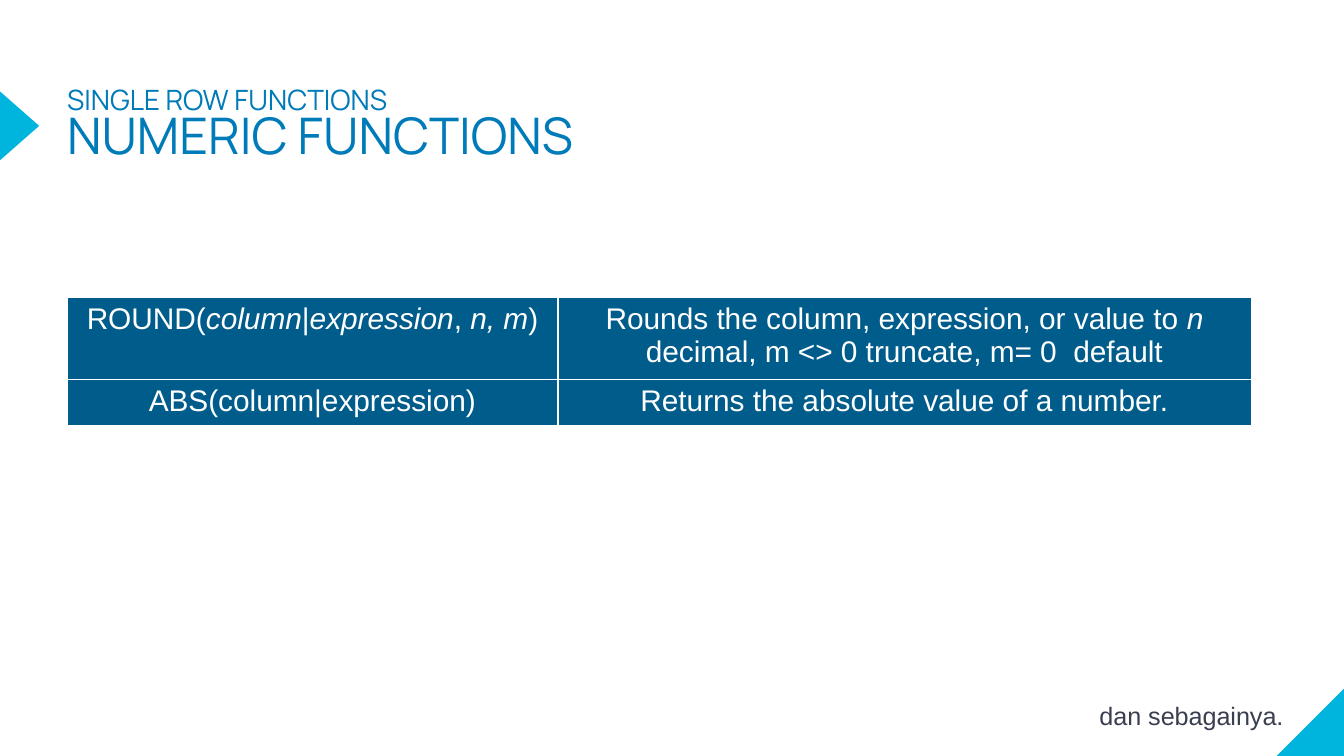
from lxml import etree
from pptx import Presentation
from pptx.dml.color import RGBColor
from pptx.enum.shapes import MSO_SHAPE
from pptx.enum.text import PP_ALIGN
from pptx.oxml.ns import qn
from pptx.util import Cm, Pt

TRIANGLE = MSO_SHAPE.ISOSCELES_TRIANGLE
RIGHT_TRIANGLE = MSO_SHAPE.RIGHT_TRIANGLE
CENTER = PP_ALIGN.CENTER

CYAN, BLUE, NAVY, GREY, WHITE = "00B5DD", "007BB9", "005C8B", "3A3F50", "FFFFFF"

TITLE = [("SINGLE ROW FUNCTIONS", 15), ("NUMERIC FUNCTIONS", 27)]
CLOSING = "dan sebagainya."

# Each cell is a list of (text, italic) runs
FUNCTIONS = [
    ([("ROUND(", False), ("column", True), ("|", False), ("expression", True),
      (", ", False), ("n, m", True), (")", False)],
     [("Rounds the column, expression, or value to ", False), ("n ", True),
      ("decimal, m <> 0 truncate, m= 0  default", False)]),
    ([("ABS(column|expression)", False)],
     [("Returns the absolute value of a number.", False)]),
]
COL_WIDTHS = (9.27, 13.11)
ROW_HEIGHTS = (1.42, 0.8)
LEFT = 1.27


def rgb(value):
    return RGBColor.from_string(value)


def add_triangle(s, kind, x, y, w, h):
    sp = s.shapes.add_shape(kind, Cm(x), Cm(y), Cm(w), Cm(h))
    sp.shadow.inherit = False
    sp.fill.solid()
    sp.fill.fore_color.rgb = rgb(CYAN)
    sp.line.fill.background()
    return sp


def add_text_box(s, x, y, w, h, margins):
    tf = s.shapes.add_textbox(Cm(x), Cm(y), Cm(w), Cm(h)).text_frame
    tf.word_wrap = True
    tf.margin_left = tf.margin_right = Cm(margins[0])
    tf.margin_top = tf.margin_bottom = Cm(margins[1])
    return tf


def set_font(p, name, color, size=None):
    p.font.name = name
    p.font.color.rgb = rgb(color)
    if size:
        p.font.size = Pt(size)


def set_borders(cell, color, width):
    tc_pr = cell._tc.get_or_add_tcPr()
    for i, side in enumerate(("lnL", "lnR", "lnT", "lnB")):
        ln = etree.Element(qn("a:" + side), w=str(Pt(width)))
        fill = etree.SubElement(ln, qn("a:solidFill"))
        etree.SubElement(fill, qn("a:srgbClr"), val=color)
        tc_pr.insert(i, ln)


def fill_cell(cell, runs):
    cell.fill.solid()
    cell.fill.fore_color.rgb = rgb(NAVY)
    cell.margin_left = cell.margin_right = Cm(0.18)
    cell.margin_top = cell.margin_bottom = Cm(0.1)
    set_borders(cell, WHITE, 1)
    p = cell.text_frame.paragraphs[0]
    p.alignment = CENTER
    set_font(p, "Arial", WHITE, 16)
    for text, italic in runs:
        r = p.add_run()
        r.text = text
        r.font.italic = italic


def main():
    prs = Presentation()
    prs.slide_width, prs.slide_height = Cm(25.4), Cm(14.29)
    s = prs.slides.add_slide(prs.slide_layouts[6])

    corner = add_triangle(s, RIGHT_TRIANGLE, 24.13, 12.99, 1.3, 1.3)
    corner._element.spPr.get_or_add_xfrm().set("flipH", "1")
    add_triangle(s, TRIANGLE, -0.28, 2.01, 1.3, 0.74).rotation = 90

    p = add_text_box(s, LEFT, 1.68, 15.67, 1.88, (0, 0)).paragraphs[0]
    p.line_spacing = 0.8
    set_font(p, "Manrope", BLUE)
    for i, (text, size) in enumerate(TITLE):
        if i:
            p.add_line_break()
        r = p.add_run()
        r.text = text
        r.font.size = Pt(size)

    p = add_text_box(s, 20.6, 13.21, 6.1, 1.57, (0.18, 0.1)).paragraphs[0]
    p.text = CLOSING
    p.line_spacing = 0.9
    set_font(p, "Arial", GREY, 13.5)

    table = s.shapes.add_table(
        len(ROW_HEIGHTS), len(COL_WIDTHS), Cm(LEFT), Cm(5.62),
        Cm(sum(COL_WIDTHS)), Cm(sum(ROW_HEIGHTS))).table
    for column, width in zip(table.columns, COL_WIDTHS):
        column.width = Cm(width)
    for row, height, contents in zip(table.rows, ROW_HEIGHTS, FUNCTIONS):
        row.height = Cm(height)
        for cell, runs in zip(row.cells, contents):
            fill_cell(cell, runs)

    prs.save("out.pptx")


if __name__ == "__main__":
    main()
